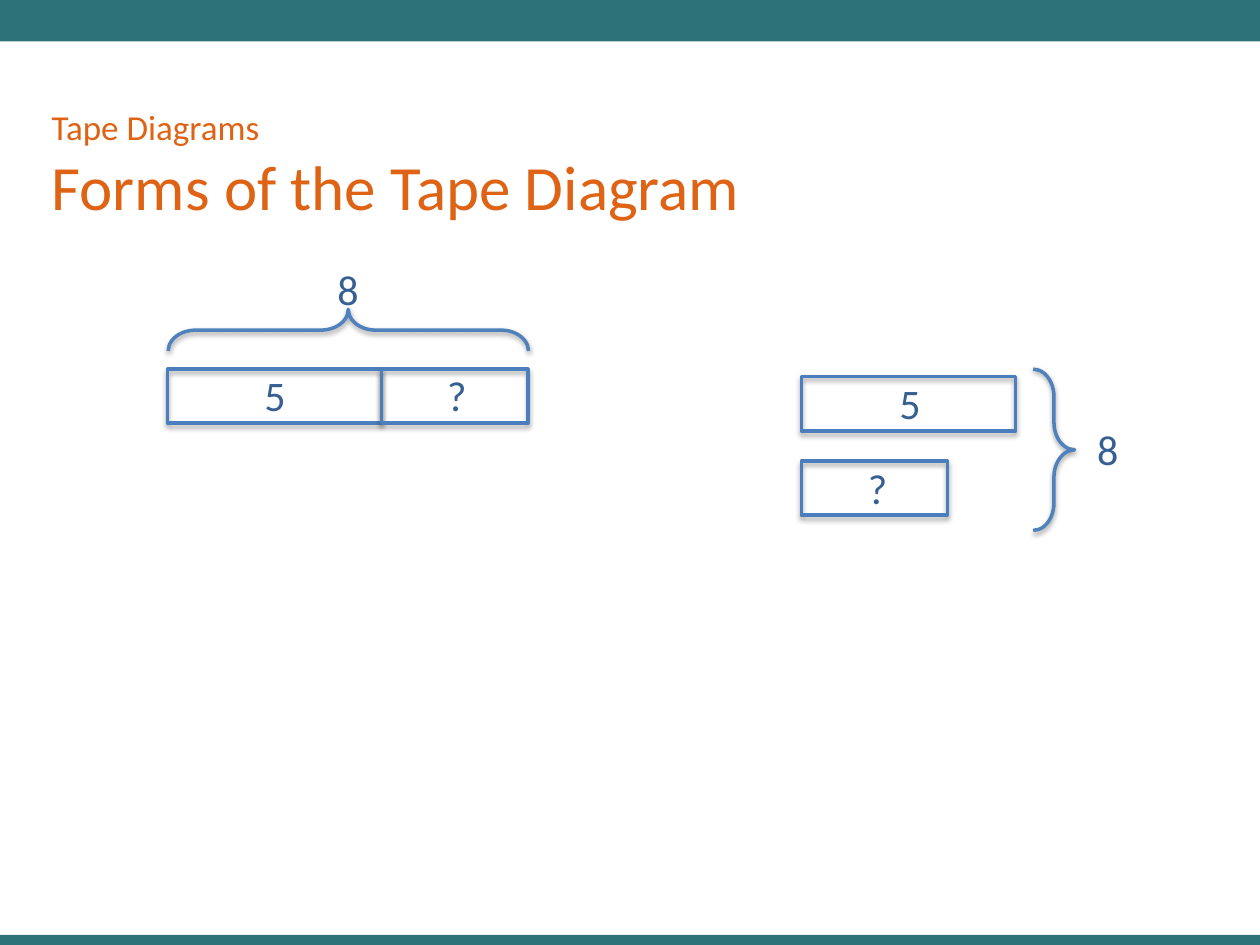
from lxml.etree import SubElement
from pptx import Presentation
from pptx.dml.color import RGBColor
from pptx.enum.shapes import MSO_SHAPE
from pptx.enum.text import MSO_ANCHOR, MSO_AUTO_SIZE, PP_ALIGN
from pptx.oxml.ns import qn
from pptx.util import Inches, Pt

TEAL = RGBColor(0x2D, 0x72, 0x78)
ORANGE = RGBColor(0xDF, 0x63, 0x14)
NAVY = RGBColor(0x37, 0x60, 0x92)
TAPE_BLUE = RGBColor(0x4B, 0x7E, 0xBC)
BRACE_BLUE = RGBColor(0x4F, 0x81, 0xBD)

deck = Presentation()
deck.slide_width, deck.slide_height = Inches(10), Inches(7.5)
slide = deck.slides.add_slide(deck.slide_layouts[5])
CELL = deck.slide_width / 100


def cells(*lengths):
    return [round(length * CELL) for length in lengths]


def add_outline(group, kind, place, color, opacity, distance):
    outline = group.shapes.add_shape(kind, *cells(*place))
    outline.fill.background()
    outline.line.color.rgb = color
    outline.line.width = Pt(2)
    outline.shadow.inherit = False
    effects = outline._element.spPr.find(qn("a:effectLst"))
    shadow = SubElement(effects, qn("a:outerShdw"), blurRad=str(Pt(3.1)), dist=str(Pt(distance)),
                        dir="5400000", rotWithShape="0")
    black = SubElement(shadow, qn("a:srgbClr"), val="000000")
    SubElement(black, qn("a:alpha"), val=str(opacity * 1000))
    return outline


for top, height in ((0, 3.3), (74.2, 0.8)):
    band = slide.shapes.add_shape(MSO_SHAPE.RECTANGLE, *cells(0, top, 100, height))
    band.fill.solid()
    band.fill.fore_color.rgb = TEAL
    band.line.fill.background()
    band.shadow.inherit = False

title = slide.shapes.title
title.left, title.top, title.width, title.height = cells(3.1, 3.3, 90, 14.9)
title.text_frame.vertical_anchor = MSO_ANCHOR.BOTTOM
heading = title.text_frame.paragraphs[0]
heading.alignment = PP_ALIGN.LEFT
for wording, size in (("Tape Diagrams", 20), ("Forms of the Tape Diagram", 36)):
    if heading.runs:
        heading.add_line_break()
    run = heading.add_run()
    run.text = wording
    run.font.name = "Calibri"
    run.font.size = Pt(size)
    run.font.color.rgb = ORANGE

KNOWN, UNKNOWN, TAPE_HEIGHT = 17, 11.6, 4.3
BRACE_DEPTH = 3.3
diagrams = (
    {
        "tapes": ((13.3, 29.3, KNOWN), (13.3 + KNOWN, 29.3, UNKNOWN)),
        "brace": (26, 11.9, BRACE_DEPTH, KNOWN + UNKNOWN),
        "turn": 270,
        "labels": (("5", 20, 28.8), ("8", 25.8, 20.4), ("?", 34.5, 28.8)),
    },
    {
        "tapes": ((63.6, 29.9, KNOWN), (63.6, 36.6, UNKNOWN)),
        "brace": (82, 29.3, BRACE_DEPTH, 12.8),
        "turn": 0,
        "labels": (("8", 86.1, 33.1), ("5", 70.4, 29.5), ("?", 67.9, 36.2)),
    },
)

for diagram in diagrams:
    group = slide.shapes.add_group_shape()
    for left, top, width in diagram["tapes"]:
        add_outline(group, MSO_SHAPE.RECTANGLE, (left, top, width, TAPE_HEIGHT), TAPE_BLUE, 35, 1.8)
    brace = add_outline(group, MSO_SHAPE.RIGHT_BRACE, diagram["brace"], BRACE_BLUE, 38, 1.6)
    brace.rotation = diagram["turn"]
    brace.adjustments[0] = 0.66
    for wording, left, top in diagram["labels"]:
        label = group.shapes.add_textbox(*cells(left, top, 6.3, 3.7))
        label.text_frame.word_wrap = True
        label.text_frame.auto_size = MSO_AUTO_SIZE.SHAPE_TO_FIT_TEXT
        run = label.text_frame.paragraphs[0].add_run()
        run.text = wording
        run.font.name = "Calibri"
        run.font.size = Pt(24)
        run.font.color.rgb = NAVY

deck.save("out.pptx")
